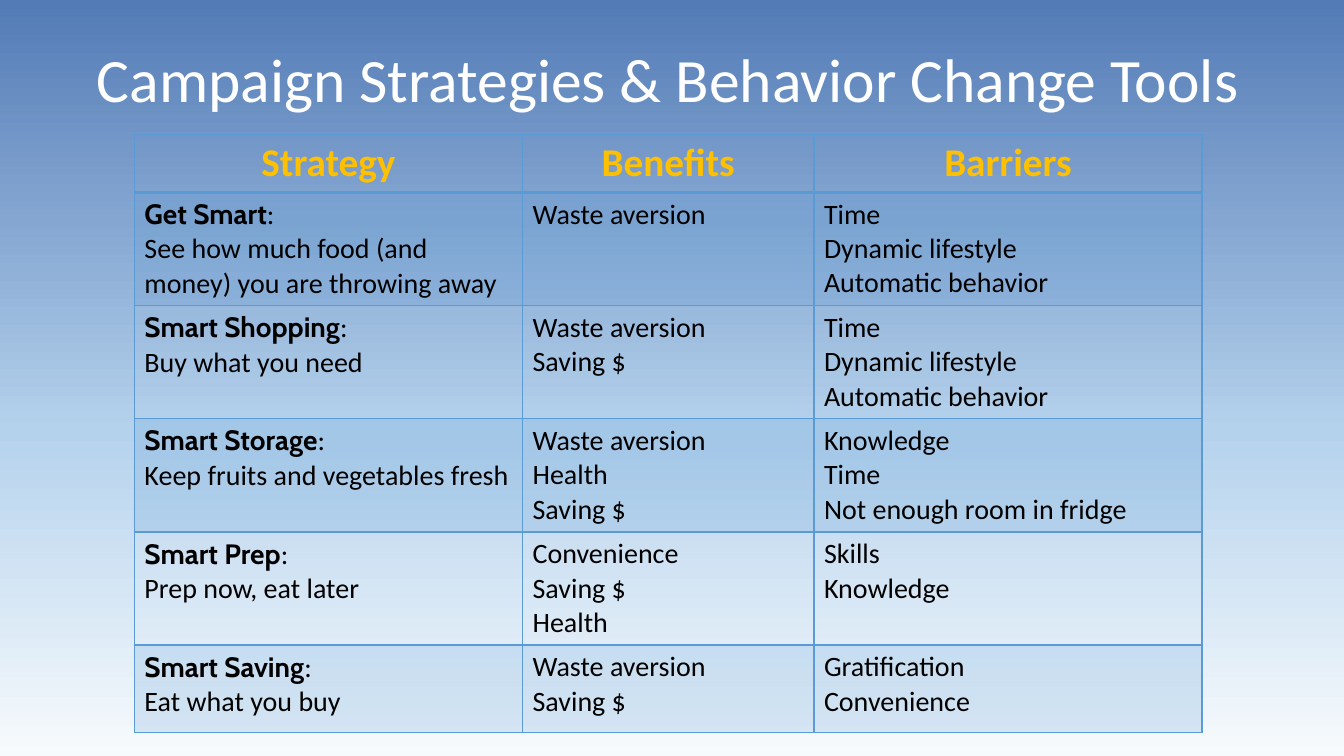
"""Build the slide on campaign strategies and behavior change tools."""
from lxml.etree import SubElement
from pptx import Presentation
from pptx.dml.color import RGBColor
from pptx.enum.text import MSO_ANCHOR, MSO_AUTO_SIZE, PP_ALIGN
from pptx.oxml.ns import qn
from pptx.util import Pt

TITLE = "Campaign Strategies & Behavior Change Tools"
HEADINGS = ["Strategy", "Benefits", "Barriers"]
STRATEGIES = [
    ("Get Smart", "See how much food (and money) you are throwing away",
     ["Waste aversion"],
     ["Time", "Dynamic lifestyle", "Automatic behavior"]),
    ("Smart Shopping", "Buy what you need",
     ["Waste aversion", "Saving $"],
     ["Time", "Dynamic lifestyle", "Automatic behavior"]),
    ("Smart Storage", "Keep fruits and vegetables fresh",
     ["Waste aversion", "Health", "Saving $"],
     ["Knowledge", "Time", "Not enough room in fridge"]),
    ("Smart Prep", "Prep now, eat later",
     ["Convenience", "Saving $", "Health"],
     ["Skills", "Knowledge"]),
    ("Smart Saving", "Eat what you buy",
     ["Waste aversion", "Saving $"],
     ["Gratification", "Convenience"]),
]

WHITE = RGBColor(0xFF, 0xFF, 0xFF)
BLACK = RGBColor(0x00, 0x00, 0x00)
GOLD = RGBColor(0xFF, 0xC0, 0x00)
BLUE = RGBColor(0x5B, 0x9B, 0xD5)
SKY = [
    (0, RGBColor(0x53, 0x7B, 0xB6)),
    (29, RGBColor(0x84, 0xA6, 0xD1)),
    (57, RGBColor(0xB5, 0xD2, 0xEC)),
    (100, RGBColor(0xF7, 0xFA, 0xFD)),
]
BAND_OPACITY = 20

SLIDE_SIZE = (960, 540)
TITLE_BOX = (62, 28.8, 832, 60.5)
TABLE_LEFT, TABLE_TOP = 96, 96
COLUMN_WIDTHS = [277.2, 208.2, 277.2]
ROW_HEIGHTS = [41.4] + [80.8] * 4 + [62.5]


def write(frame, lines, size=20, color=BLACK, align=PP_ALIGN.LEFT, spacing=None):
    """Write lines, each a list of (text, font, bold) spans, into a text frame."""
    for index, line in enumerate(lines):
        para = frame.add_paragraph() if index else frame.paragraphs[0]
        para.alignment = align
        para.line_spacing = spacing
        for text, font, bold in line:
            span = para.add_run()
            span.text = text
            span.font.name = font
            span.font.size = Pt(size)
            span.font.bold = bold
            span.font.color.rgb = color


def plain(lines):
    """Turn texts into lines of one regular span."""
    return [[(text, "Calibri", False)] for text in lines]


def paint_sky(page):
    """Fill the page background with the vertical gradient."""
    fill = page.background.fill
    fill.gradient()
    fill.gradient_angle = 270
    stops = page.element.find(".//" + qn("a:gsLst"))
    for stop in list(stops):
        stops.remove(stop)
    for position, color in SKY:
        stop = SubElement(stops, qn("a:gs"), pos=str(position * 1000))
        SubElement(stop, qn("a:srgbClr"), val=str(color))


def style_cell(cell, row):
    """Draw the borders of a cell and its translucent band."""
    properties = cell._tc.get_or_add_tcPr()
    widths = {"L": 1, "R": 1, "T": 2 if row == 1 else 1, "B": 2 if row == 0 else 1}
    for side, width in widths.items():
        line = SubElement(properties, qn("a:ln" + side), w=str(Pt(width)))
        solid = SubElement(line, qn("a:solidFill"))
        SubElement(solid, qn("a:srgbClr"), val=str(BLUE))
    if row % 2 == 0:
        cell.fill.background()
        return
    cell.fill.solid()
    cell.fill.fore_color.rgb = BLUE
    tint = properties.find(qn("a:solidFill")).find(qn("a:srgbClr"))
    SubElement(tint, qn("a:alpha"), val=str(BAND_OPACITY * 1000))


def add_title(page):
    """Place and format the title."""
    title = page.shapes.title
    title.left, title.top, title.width, title.height = map(Pt, TITLE_BOX)
    frame = title.text_frame
    frame.word_wrap = True
    frame.auto_size = MSO_AUTO_SIZE.NONE
    frame.vertical_anchor = MSO_ANCHOR.MIDDLE
    write(frame, plain([TITLE]), size=44, color=WHITE, spacing=0.9)


def add_strategy_table(page):
    """Add the table of strategies, benefits and barriers."""
    table = page.shapes.add_table(
        len(ROW_HEIGHTS), len(COLUMN_WIDTHS), Pt(TABLE_LEFT), Pt(TABLE_TOP),
        Pt(sum(COLUMN_WIDTHS)), Pt(sum(ROW_HEIGHTS))).table
    table.first_row = table.horz_banding = False
    for column, width in zip(table.columns, COLUMN_WIDTHS):
        column.width = Pt(width)
    for row, height in zip(table.rows, ROW_HEIGHTS):
        row.height = Pt(height)

    for column, heading in enumerate(HEADINGS):
        write(table.cell(0, column).text_frame, [[(heading, "Calibri", True)]],
              size=28, color=GOLD, align=PP_ALIGN.CENTER)
    for row, (name, advice, benefits, barriers) in enumerate(STRATEGIES, 1):
        label = [(name, "Cabin", True), (":", "Calibri", False)]
        contents = [[label] + plain([advice]), plain(benefits), plain(barriers)]
        for column, lines in enumerate(contents):
            write(table.cell(row, column).text_frame, lines)
    for row in range(len(ROW_HEIGHTS)):
        for column in range(len(COLUMN_WIDTHS)):
            style_cell(table.cell(row, column), row)


def main():
    """Create and save the deck."""
    deck = Presentation()
    deck.slide_width, deck.slide_height = map(Pt, SLIDE_SIZE)
    page = deck.slides.add_slide(deck.slide_layouts[5])
    paint_sky(page)
    add_title(page)
    add_strategy_table(page)
    deck.save("out.pptx")


if __name__ == "__main__":
    main()
